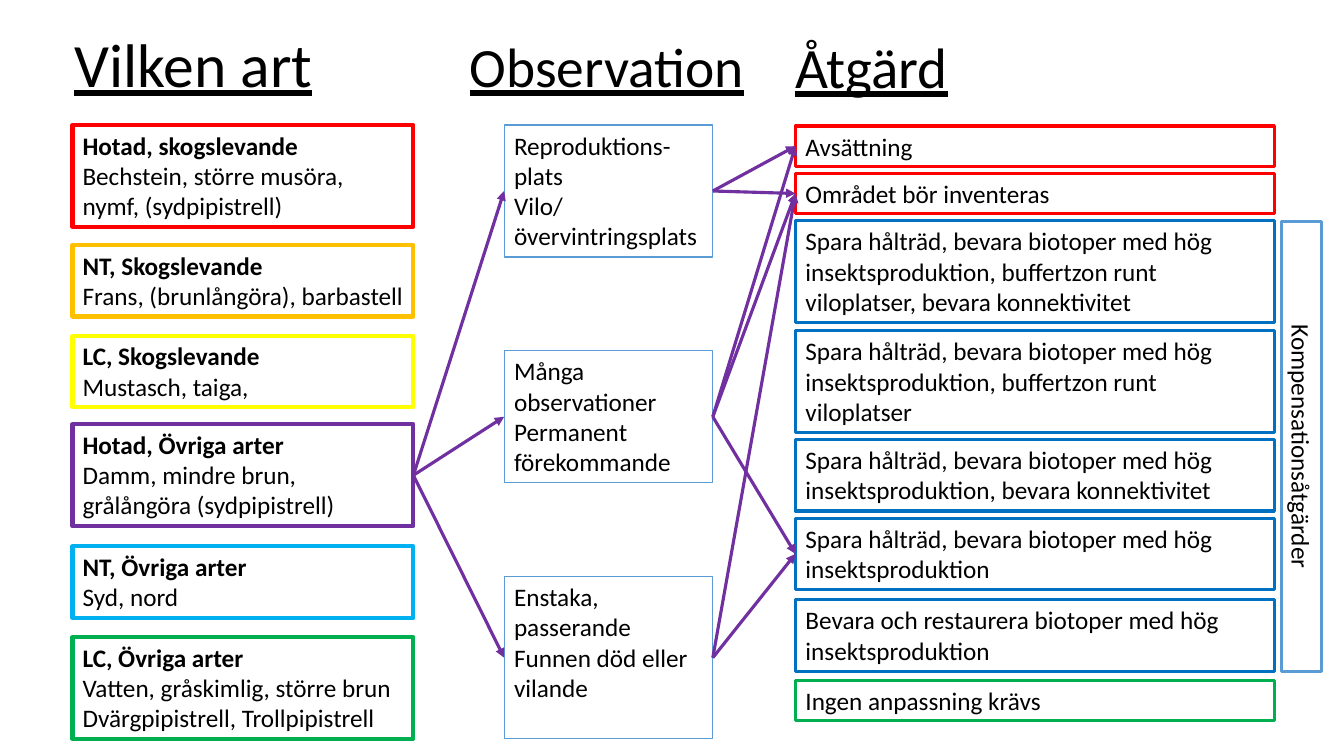
from dataclasses import dataclass

import lxml.etree
import pptx
import pptx.dml.color
import pptx.enum.shapes
import pptx.enum.text
import pptx.oxml.ns
import pptx.util

Inches = pptx.util.Inches
Pt = pptx.util.Pt
RGBColor = pptx.dml.color.RGBColor
Align = pptx.enum.text.PP_ALIGN
Anchor = pptx.enum.text.MSO_ANCHOR

BLACK = RGBColor(0x00, 0x00, 0x00)
RED = RGBColor(0xFF, 0x00, 0x00)
ORANGE = RGBColor(0xFF, 0xC0, 0x00)
YELLOW = RGBColor(0xFF, 0xFF, 0x00)
PURPLE = RGBColor(0x70, 0x30, 0xA0)
SKY = RGBColor(0x00, 0xB0, 0xF0)
GREEN = RGBColor(0x00, 0xB0, 0x50)
BLUE = RGBColor(0x00, 0x70, 0xC0)
PALE_BLUE = RGBColor(0x5B, 0x9B, 0xD5)

FONT = "Calibri"
RIGHT_SIDE, LEFT_SIDE = 3, 1


@dataclass(frozen=True)
class Heading:
    text: str
    left: float
    top: float
    width: float
    height: float
    size: float
    spacing: float


@dataclass(frozen=True)
class Column:
    left: float
    width: float
    border: float
    bold_first: bool = False


@dataclass(frozen=True)
class Box:
    top: float
    lines: int
    color: RGBColor
    paragraphs: tuple[str, ...]

    @property
    def height(self) -> float:
        return round(0.1 + 0.303 * self.lines, 2)


HEADINGS = (
    Heading("Vilken art", 0.64, 0.27, 3.3, 0.79, 44, 0.9),
    Heading("Observation", 4.56, 0.34, 3.1, 0.7, 39.6, 0.9),
    Heading("Åtgärd", 7.79, 0.38, 3.35, 0.67, 40.7, 0.8),
)

SPECIES_COLUMN = Column(0.72, 3.38, 3, bold_first=True)
OBSERVATION_COLUMN = Column(5, 2.07, 0.75)
ACTION_COLUMN = Column(7.89, 4.75, 2.25)

SPECIES = (
    Box(1.24, 3, RED, ("Hotad, skogslevande", "Bechstein, större musöra, nymf, (sydpipistrell)")),
    Box(2.43, 2, ORANGE, ("NT, Skogslevande", "Frans, (brunlångöra), barbastell")),
    Box(3.33, 2, YELLOW, ("LC, Skogslevande", "Mustasch, taiga,")),
    Box(4.21, 3, PURPLE, ("Hotad, Övriga arter", "Damm, mindre brun, grålångöra (sydpipistrell)")),
    Box(5.42, 2, SKY, ("NT, Övriga arter", "Syd, nord")),
    Box(6.32, 3, GREEN, ("LC, Övriga arter", "Vatten, gråskimlig, större brun",
                         "Dvärgpipistrell, Trollpipistrell")),
)
OBSERVATIONS = (
    Box(1.24, 4, PALE_BLUE, ("Reproduktions-plats", "Vilo/övervintringsplats")),
    Box(3.48, 4, PALE_BLUE, ("Många observationer", "Permanent förekommande")),
    Box(5.72, 5, PALE_BLUE, ("Enstaka, passerande", "Funnen död eller vilande")),
)
SAVE_TREES = "Spara hålträd, bevara biotoper med hög insektsproduktion"
ACTIONS = (
    Box(1.25, 1, RED, ("Avsättning",)),
    Box(1.72, 1, RED, ("Området bör inventeras",)),
    Box(2.19, 3, BLUE, (f"{SAVE_TREES}, buffertzon runt viloplatser, bevara konnektivitet",)),
    Box(3.28, 3, BLUE, (f"{SAVE_TREES}, buffertzon runt viloplatser",)),
    Box(4.36, 2, BLUE, (f"{SAVE_TREES}, bevara konnektivitet",)),
    Box(5.14, 2, BLUE, (SAVE_TREES,)),
    Box(5.95, 2, BLUE, ("Bevara och restaurera biotoper med hög insektsproduktion",)),
    Box(6.75, 1, GREEN, ("Ingen anpassning krävs",)),
)
COMPENSATION_COLUMN = Column(10.68, 4.46, 2.25)
COMPENSATION = Box(4.23, 1, PALE_BLUE, ("Kompensationsåtgärder",))

THREATENED_OTHER = 3
ACTIONS_BY_OBSERVATION = ((0, 1), (0, 1, 5), (1, 5))


def add_heading(slide, heading: Heading) -> None:
    frame = slide.shapes.add_textbox(
        Inches(heading.left), Inches(heading.top), Inches(heading.width), Inches(heading.height)
    ).text_frame
    frame.word_wrap = True
    frame.vertical_anchor = Anchor.MIDDLE
    paragraph = frame.paragraphs[0]
    paragraph.text = heading.text
    paragraph.line_spacing = heading.spacing
    paragraph.font.name = FONT
    paragraph.font.size = Pt(heading.size)
    paragraph.font.underline = True
    paragraph.font.color.rgb = BLACK


def add_box(slide, column: Column, box: Box, align: Align = Align.LEFT):
    shape = slide.shapes.add_shape(
        pptx.enum.shapes.MSO_SHAPE.RECTANGLE,
        Inches(column.left), Inches(box.top), Inches(column.width), Inches(box.height),
    )
    shape.shadow.inherit = False
    shape.fill.background()
    shape.line.color.rgb = box.color
    shape.line.width = Pt(column.border)
    frame = shape.text_frame
    frame.word_wrap = True
    frame.vertical_anchor = Anchor.TOP
    for index, text in enumerate(box.paragraphs):
        paragraph = frame.add_paragraph() if index else frame.paragraphs[0]
        paragraph.text = text
        paragraph.alignment = align
        paragraph.font.name = FONT
        paragraph.font.size = Pt(18)
        paragraph.font.bold = column.bold_first and index == 0
        paragraph.font.color.rgb = BLACK
    return shape


def add_arrow(slide, source, target) -> None:
    arrow = slide.shapes.add_connector(pptx.enum.shapes.MSO_CONNECTOR.STRAIGHT, 0, 0, 0, 0)
    arrow.begin_connect(source, RIGHT_SIDE)
    arrow.end_connect(target, LEFT_SIDE)
    arrow.line.color.rgb = PURPLE
    arrow.line.width = Pt(2.25)
    qn = pptx.oxml.ns.qn
    properties = arrow.element.spPr
    lxml.etree.SubElement(properties.find(qn("a:ln")), qn("a:tailEnd"), type="triangle")
    lxml.etree.SubElement(properties, qn("a:effectLst"))


def main() -> None:
    presentation = pptx.Presentation()
    presentation.slide_width = Inches(13.33)
    presentation.slide_height = Inches(7.5)
    slide = presentation.slides.add_slide(presentation.slide_layouts[6])

    for heading in HEADINGS:
        add_heading(slide, heading)

    species = [add_box(slide, SPECIES_COLUMN, box) for box in SPECIES]
    observations = [add_box(slide, OBSERVATION_COLUMN, box) for box in OBSERVATIONS]
    actions = [add_box(slide, ACTION_COLUMN, box) for box in ACTIONS]
    compensation = add_box(slide, COMPENSATION_COLUMN, COMPENSATION, Align.CENTER)
    compensation.rotation = 90

    for observation, targets in zip(observations, ACTIONS_BY_OBSERVATION):
        add_arrow(slide, species[THREATENED_OTHER], observation)
        for target in targets:
            add_arrow(slide, observation, actions[target])

    presentation.save("out.pptx")


if __name__ == "__main__":
    main()
